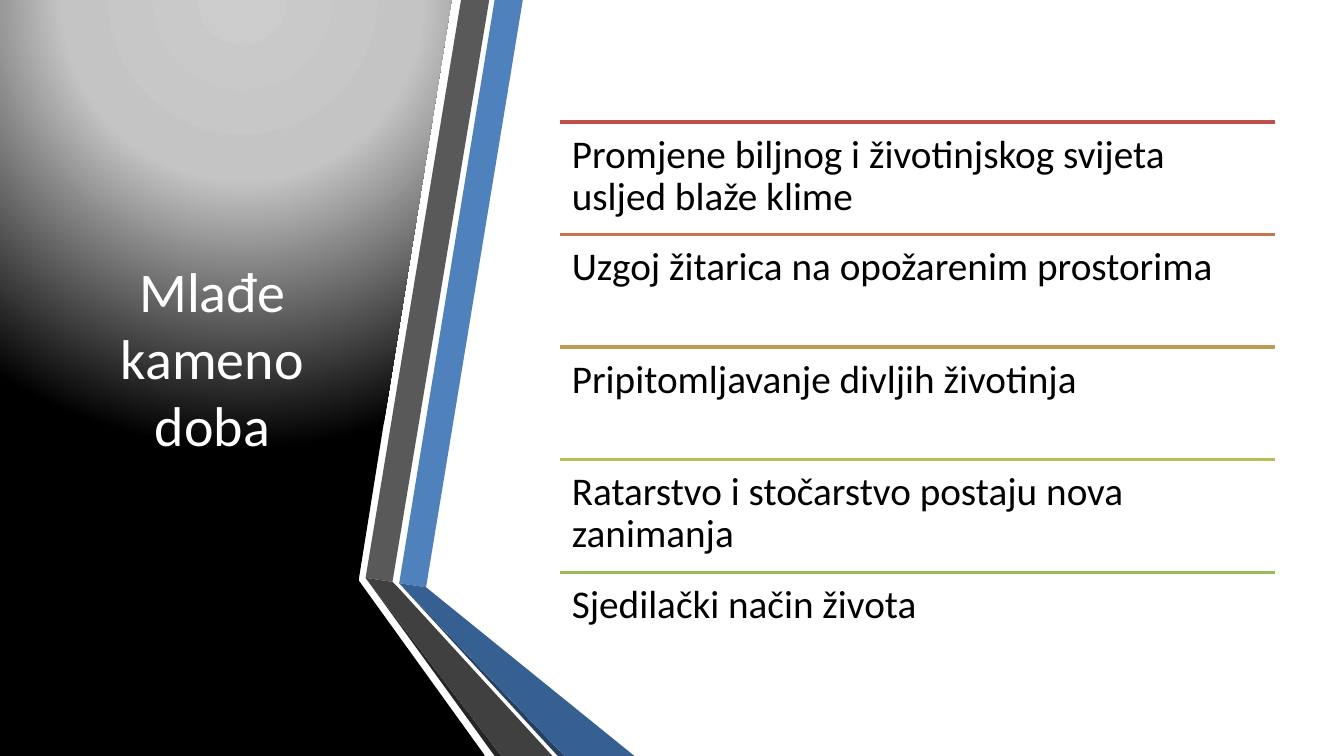
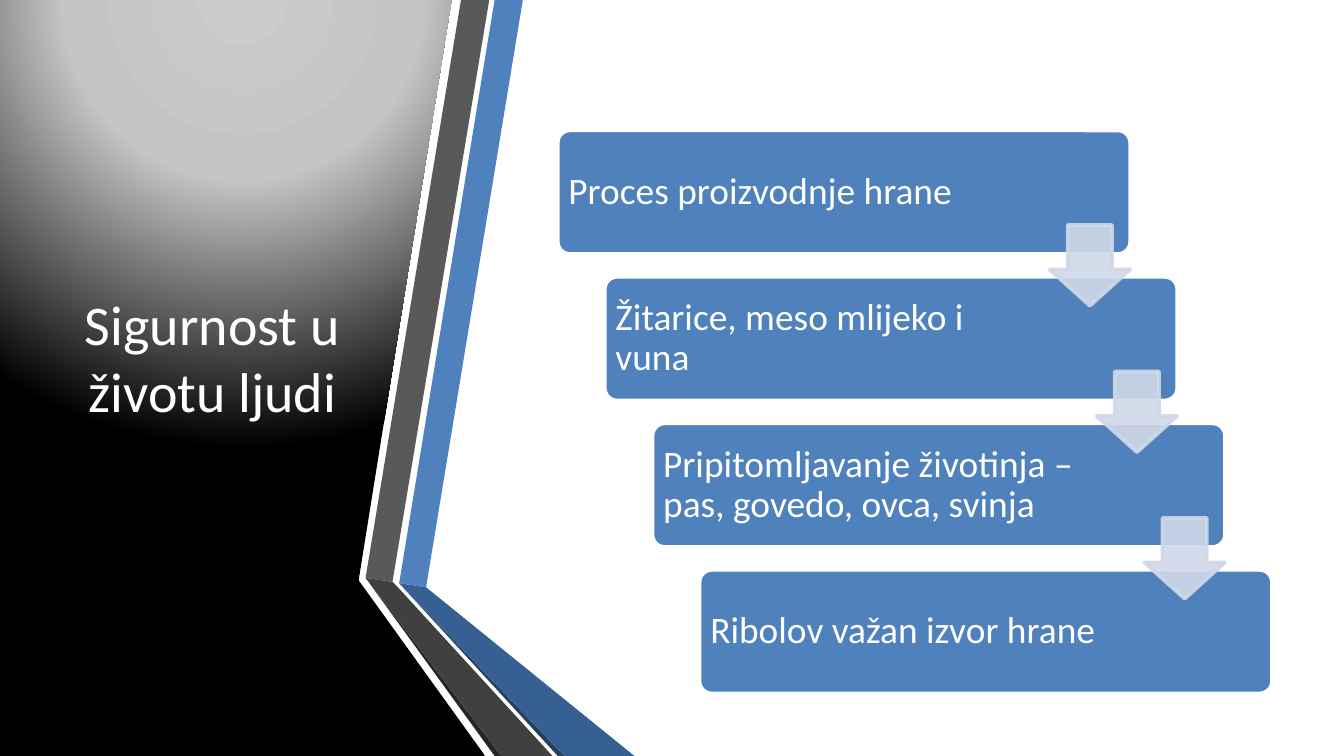
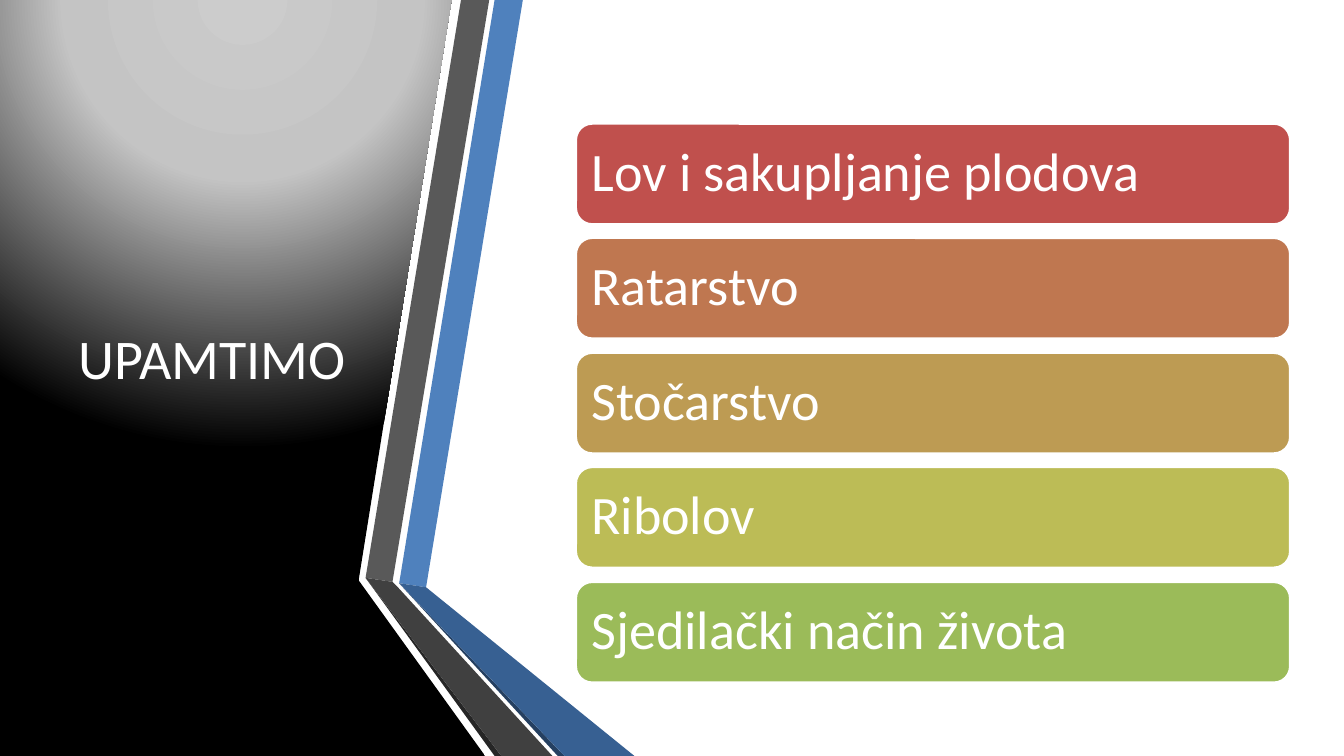
from lxml.etree import SubElement
from pptx import Presentation
from pptx.dml.color import RGBColor
from pptx.enum.shapes import MSO_CONNECTOR, MSO_SHAPE
from pptx.enum.text import MSO_ANCHOR, PP_ALIGN
from pptx.oxml import parse_xml
from pptx.oxml.ns import nsdecls, qn
from pptx.util import Pt

PX = 4572  # EMU per px, 200 px to the inch
WIDTH, HEIGHT = 2000, 1125
FONT = "Calibri"
WHITE, BLACK, BLUE, PALE_BLUE = "FFFFFF", "000000", "4F81BD", "D0D8E8"
ROW_COLORS = ["C0504D", "BF7750", "BD9B53", "BCBC56", "9BBB59"]

TITLES = ["Mlađe kameno doba", "Sigurnost u životu ljudi", "UPAMTIMO"]
CHANGES = [
    "Promjene biljnog i životinjskog svijeta usljed blaže klime",
    "Uzgoj žitarica na opožarenim prostorima",
    "Pripitomljavanje divljih životinja",
    "Ratarstvo i stočarstvo postaju nova zanimanja",
    "Sjedilački način života",
]
FOOD_STEPS = [
    "Proces proizvodnje hrane",
    "Žitarice, meso mlijeko i vuna",
    "Pripitomljavanje životinja – pas, govedo, ovca, svinja",
    "Ribolov važan izvor hrane",
]
SUMMARY = [
    "Lov i sakupljanje plodova",
    "Ratarstvo",
    "Stočarstvo",
    "Ribolov",
    "Sjedilački način života",
]

# Side panel and the folded bands beside it, from back to front
PANEL = [(0, 0), (672, 0), (534, 862), (534, 864), (722, HEIGHT), (0, HEIGHT)]
BANDS = [
    (BLUE, [(594, 868), (634, 874), (778, 0), (736, 0)]),
    ("595959", [(728, 0), (686, 0), (544, 860), (584, 866)]),
    ("262626", [(544, 860), (736, HEIGHT), (746, HEIGHT)]),
    ("254061", [(594, 868), (830, HEIGHT), (840, HEIGHT)]),
    ("376092", [(594, 868), (840, HEIGHT), (944, HEIGHT), (634, 874)]),
    ("404040", [(822, HEIGHT), (592, 874), (584, 866), (544, 860), (746, HEIGHT)]),
]
PANEL_GRADIENT = f"""<a:gradFill {nsdecls("a")} rotWithShape="1"><a:gsLst>
<a:gs pos="0"><a:srgbClr val="CCCCCC"/></a:gs>
<a:gs pos="40000"><a:srgbClr val="C4C4C4"/></a:gs>
<a:gs pos="100000"><a:srgbClr val="000000"/></a:gs></a:gsLst>
<a:path path="circle"><a:fillToRect l="50000" t="-80000" r="50000" b="180000"/></a:path>
</a:gradFill>"""


def color(value):
    return RGBColor.from_string(value)


def add_text(slide, text, box, size, text_color, margins, anchor, body=True):
    shape = slide.shapes.add_textbox(*(length * PX for length in box))
    frame = shape.text_frame
    frame.word_wrap = True
    frame.vertical_anchor = anchor
    frame.margin_left = frame.margin_right = margins[0] * PX
    frame.margin_top = frame.margin_bottom = margins[1] * PX
    paragraph = frame.paragraphs[0]
    if body:
        paragraph.line_spacing = 0.9
        paragraph.space_after = Pt(round(size * 0.35))
    else:
        paragraph.alignment = PP_ALIGN.CENTER
    run = paragraph.add_run()
    run.text = text
    run.font.name = FONT
    run.font.size = Pt(size)
    run.font.color.rgb = color(text_color)


presentation = Presentation()
presentation.slide_width = WIDTH * PX
presentation.slide_height = HEIGHT * PX

# Shared panel, bands and title
slides = []
for title in TITLES:
    slide = presentation.slides.add_slide(presentation.slide_layouts[6])
    slides.append(slide)
    for fill_color, points in [(None, PANEL)] + BANDS:
        builder = slide.shapes.build_freeform(*points[0], scale=PX)
        builder.add_line_segments(points[1:], close=True)
        shape = builder.convert_to_shape()
        shape.shadow.inherit = False
        shape.line.fill.background()
        if fill_color:
            shape.fill.solid()
            shape.fill.fore_color.rgb = color(fill_color)
        else:
            shape.fill.background()
            no_fill = shape._element.spPr.find(qn("a:noFill"))
            no_fill.getparent().replace(no_fill, parse_xml(PANEL_GRADIENT))
    add_text(slide, title, (88, 112, 456, 838), 30, WHITE, (20, 10),
             MSO_ANCHOR.MIDDLE, body=False)

changes_slide, food_slide, summary_slide = slides

# Slide 1: ruled list
for index, (text, row_color) in enumerate(zip(CHANGES, ROW_COLORS)):
    top = 182 + 335 * index // 2
    rule = changes_slide.shapes.add_connector(
        MSO_CONNECTOR.STRAIGHT, 833 * PX, top * PX, 1898 * PX, top * PX)
    rule.line.color.rgb = color(row_color)
    rule.line.width = Pt(2)
    SubElement(rule._element.spPr, qn("a:effectLst"))
    add_text(changes_slide, text, (833, top, 1065, 168), 21, BLACK, (18, 18), MSO_ANCHOR.TOP)

# Slide 2: staircase of steps, then the arrows between them
for index, text in enumerate(FOOD_STEPS):
    left, top = 830 + 141 * index // 2, 194 + 218 * index
    step = food_slide.shapes.add_shape(
        MSO_SHAPE.ROUNDED_RECTANGLE, left * PX, top * PX, 852 * PX, 184 * PX)
    step.adjustments[0] = 0.1
    step.shadow.inherit = False
    step.fill.solid()
    step.fill.fore_color.rgb = color(BLUE)
    step.line.color.rgb = color(WHITE)
    step.line.width = Pt(2)
    add_text(food_slide, text, (left, top, 660, 184), 20, WHITE, (16, 16), MSO_ANCHOR.MIDDLE)

for index in range(len(FOOD_STEPS) - 1):
    left, top = 1562 + 141 * index // 2, 335 + 218 * index
    arrow = food_slide.shapes.add_shape(
        MSO_SHAPE.DOWN_ARROW, left * PX, top * PX, 120 * PX, 120 * PX)
    arrow.adjustments[0] = 0.55
    arrow.adjustments[1] = 0.45
    arrow.shadow.inherit = False
    arrow.fill.solid()
    arrow.fill.fore_color.rgb = color(PALE_BLUE)
    arrow.line.color.rgb = color(PALE_BLUE)
    arrow.line.width = Pt(2)
    for arrow_color in arrow._element.spPr.iter(qn("a:srgbClr")):
        SubElement(arrow_color, qn("a:alpha"), val="90000")

# Slide 3: coloured bars
for index, (text, row_color) in enumerate(zip(SUMMARY, ROW_COLORS)):
    box = (856, 183 + 341 * index // 2, 1065, 152)
    bar = summary_slide.shapes.add_shape(
        MSO_SHAPE.ROUNDED_RECTANGLE, *(length * PX for length in box))
    bar.shadow.inherit = False
    bar.fill.solid()
    bar.fill.fore_color.rgb = color(row_color)
    bar.line.color.rgb = color(WHITE)
    bar.line.width = Pt(2)
    add_text(summary_slide, text, box, 29, WHITE, (24, 24), MSO_ANCHOR.MIDDLE)

presentation.save("out.pptx")
